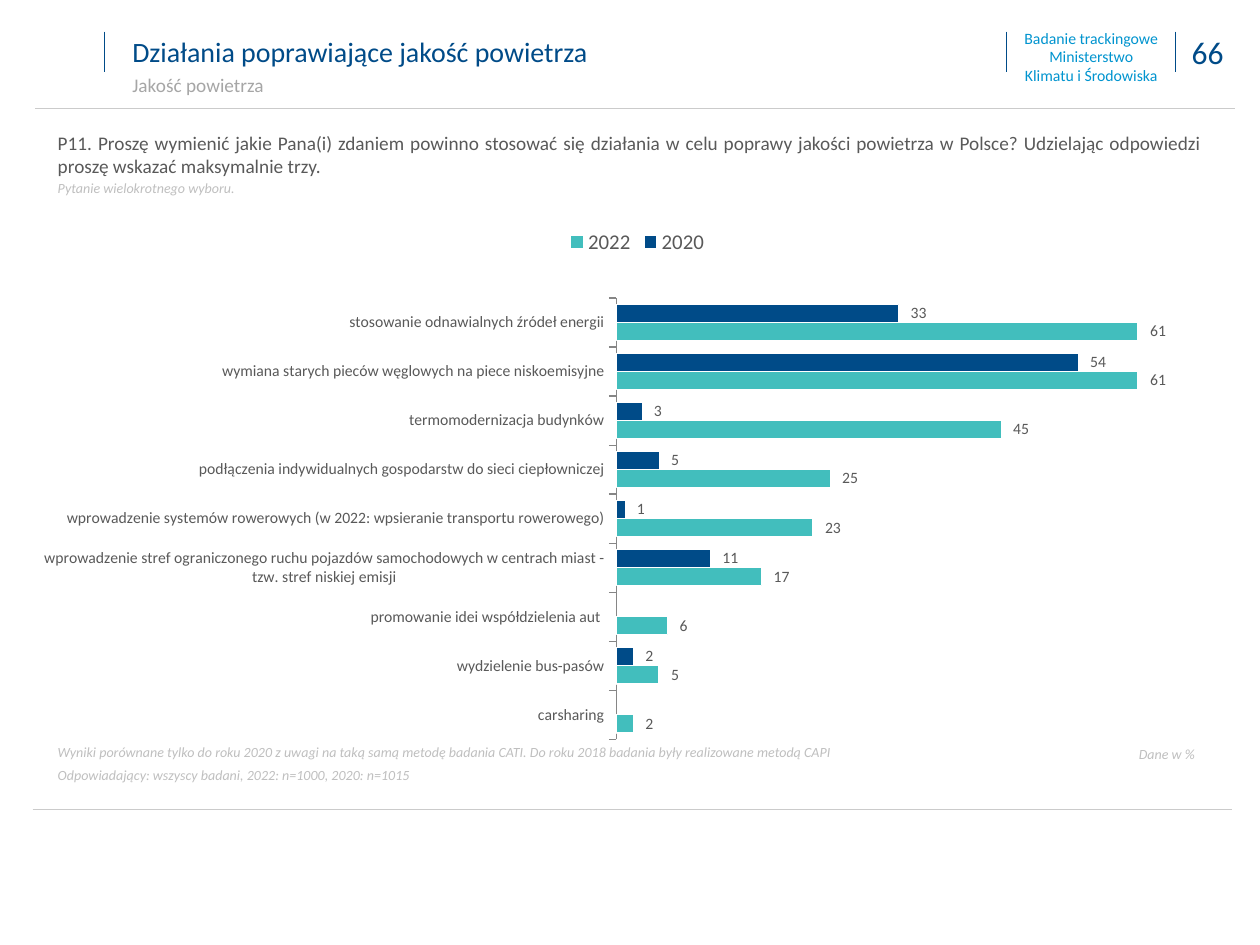
"""Builds the survey slide on actions that improve air quality."""
from dataclasses import dataclass
from typing import Optional

from lxml.etree import SubElement
from pptx import Presentation
from pptx.chart.data import CategoryChartData
from pptx.dml.color import RGBColor
from pptx.enum.chart import XL_CHART_TYPE, XL_LABEL_POSITION, XL_LEGEND_POSITION, XL_TICK_MARK
from pptx.enum.shapes import MSO_CONNECTOR
from pptx.enum.text import MSO_ANCHOR, MSO_AUTO_SIZE, PP_ALIGN
from pptx.oxml import parse_xml
from pptx.oxml.ns import nsdecls, qn
from pptx.util import Emu, Inches, Pt

FONT = "Calibri"
NAVY, SKY, TEAL = "004B88", "0094CF", "42BEBD"
DARK, MIDDLE, PALE, RULE = "595959", "A6A6A6", "BFBFBF", "CBCBCB"
WIDTH, HEIGHT = Inches(10), Inches(7.5)
COLUMNS, ROWS = 100, 75
NUMBER_FORMAT = r"_-* #\ ##0\ _z_ł_-;\-* #\ ##0\ _z_ł_-;_-"
PLOT_AREA = {"x": 0.482, "y": 0.157, "w": 0.511, "h": 0.838}


@dataclass(frozen=True)
class Area:
    """A rectangle in grid columns and rows."""
    column: float
    row: float
    columns: float
    rows: float

    def box(self) -> tuple[Emu, Emu, Emu, Emu]:
        """Return left, top, width and height."""
        return across(self.column), down(self.row), across(self.columns), down(self.rows)


@dataclass(frozen=True)
class Line:
    """One paragraph and its look."""
    text: str
    size: float
    color: str
    italic: bool = False
    before: float = 0


@dataclass(frozen=True)
class Note:
    """A text block with its place."""
    area: Area
    lines: tuple[Line, ...]
    align: PP_ALIGN = PP_ALIGN.LEFT
    anchor: MSO_ANCHOR = MSO_ANCHOR.MIDDLE
    indent: float = 1


@dataclass(frozen=True)
class Year:
    """One survey year in the chart."""
    name: str
    color: str
    outline: float
    shares: tuple[Optional[int], ...]


TITLE = Note(Area(8.3, 2, 71.7, 4.1),
             (Line("Działania poprawiające jakość powietrza", 16, NAVY),), indent=2.2)
NOTES = (
    Note(Area(8.3, 5.5, 71.5, 2.4), (Line("Jakość powietrza", 11, MIDDLE),), indent=2.2),
    Note(Area(79.4, 1.7, 14.4, 5.6),
         tuple(Line(text, 9, SKY) for text in
               ("Badanie trackingowe", "Ministerstwo", "Klimatu i Środowiska")),
         PP_ALIGN.CENTER),
    Note(Area(92.5, 2.1, 6.7, 4), (Line("66", 18, NAVY),), PP_ALIGN.CENTER),
    Note(Area(3.6, 9.9, 92.8, 6.5),
         (Line("P11. Proszę wymienić jakie Pana(i) zdaniem powinno stosować się działania w celu "
               "poprawy jakości powietrza w Polsce? Udzielając odpowiedzi proszę wskazać "
               "maksymalnie trzy.", 11, DARK),
          Line("Pytanie wielokrotnego wyboru.", 8, PALE, True, 1.6)),
         PP_ALIGN.JUSTIFY, MSO_ANCHOR.TOP),
    Note(Area(3.6, 58.5, 72.3, 2.4),
         (Line("Wyniki porównane tylko do roku 2020 z uwagi na taką samą metodę badania CATI. "
               "Do roku 2018 badania były realizowane metodą CAPI", 8, PALE, True),),
         PP_ALIGN.JUSTIFY),
    Note(Area(3.6, 60.3, 92.8, 2.4),
         (Line("Odpowiadający: wszyscy badani, 2022: n=1000, 2020: n=1015", 8, PALE, True),)),
    Note(Area(89.4, 58.6, 7, 2.4), (Line("Dane w %", 8, PALE, True),)),
)
DIVIDER_COLUMNS = (8.3, 79.9, 93.3)
RULE_STARTS = ((2.8, 8.6), (2.6, 64.2))
RULE_COLUMNS = 95.2
CHART_AREA = Area(3.5, 17.1, 93.6, 41.8)
ACTIONS = (
    "stosowanie odnawialnych źródeł energii",
    "wymiana starych pieców węglowych na piece niskoemisyjne",
    "termomodernizacja budynków",
    "podłączenia indywidualnych gospodarstw do sieci ciepłowniczej",
    "wprowadzenie systemów rowerowych (w 2022: wpsieranie transportu rowerowego)",
    "wprowadzenie stref ograniczonego ruchu pojazdów samochodowych w centrach miast - "
    "tzw. stref niskiej emisji",
    "promowanie idei współdzielenia aut ",
    "wydzielenie bus-pasów",
    "carsharing",
)
YEARS = (
    Year("2020", NAVY, 0.25, (33, 54, 3, 5, 1, 11, None, 2, None)),
    Year("2022", TEAL, 0.75, (61, 61, 45, 25, 23, 17, 6, 5, 2)),
)


def across(columns: float) -> Emu:
    """Turn grid columns into a length."""
    return Emu(round(WIDTH * columns / COLUMNS))


def down(rows: float) -> Emu:
    """Turn grid rows into a length."""
    return Emu(round(HEIGHT * rows / ROWS))


def paint(color_format, color: str) -> None:
    """Set a colour from a hex string."""
    color_format.rgb = RGBColor.from_string(color)


def style_font(font, size: float, color: str, italic: bool = False) -> None:
    """Set family, size, colour and slant."""
    font.name, font.size, font.italic = FONT, Pt(size), italic
    paint(font.color, color)


def write_note(shape, note: Note) -> None:
    """Place a text shape and fill it."""
    shape.left, shape.top, shape.width, shape.height = note.area.box()
    frame = shape.text_frame
    frame.text = "\n".join(line.text for line in note.lines)
    frame.word_wrap, frame.auto_size = True, MSO_AUTO_SIZE.NONE
    frame.vertical_anchor = note.anchor
    frame.margin_left = across(note.indent)
    for paragraph, line in zip(frame.paragraphs, note.lines):
        paragraph.alignment = note.align
        paragraph.space_before = Pt(line.before)
        for run in paragraph.runs:
            style_font(run.font, line.size, line.color, line.italic)


def draw_line(slide, column: float, row: float, columns: float, rows: float, color: str) -> None:
    """Draw a thin straight line."""
    line = slide.shapes.add_connector(MSO_CONNECTOR.STRAIGHT, across(column), down(row),
                                      across(column + columns), down(row + rows))
    line.line.width = Pt(0.25)
    paint(line.line.color, color)
    SubElement(line._element.spPr, qn("a:effectLst"))


def set_plot_area(chart) -> None:
    """Fix the inner plot area as shares of the chart."""
    plot_area = chart._chartSpace.chart.plotArea
    for layout in plot_area.findall(qn("c:layout")):
        plot_area.remove(layout)
    settings = {"layoutTarget": "inner", "xMode": "edge", "yMode": "edge", **PLOT_AREA}
    parts = "".join(f'<c:{name} val="{value}"/>' for name, value in settings.items())
    plot_area.insert(0, parse_xml(f"<c:layout {nsdecls('c')}><c:manualLayout>{parts}"
                                  "</c:manualLayout></c:layout>"))


def draw_chart(slide) -> None:
    """Draw the bars of both survey years."""
    survey = CategoryChartData()
    survey.categories = ACTIONS
    for year in YEARS:
        survey.add_series(year.name, year.shares)
    chart = slide.shapes.add_chart(XL_CHART_TYPE.BAR_CLUSTERED, *CHART_AREA.box(), survey).chart
    style_font(chart.font, 9, DARK)
    chart.has_title = False
    chart.has_legend = True
    chart.legend.position = XL_LEGEND_POSITION.TOP
    chart.legend.include_in_layout = False
    style_font(chart.legend.font, 12, DARK)
    set_plot_area(chart)
    actions, shares = chart.category_axis, chart.value_axis
    actions.reverse_order = True
    actions.major_tick_mark = XL_TICK_MARK.OUTSIDE
    style_font(actions.tick_labels.font, 9, DARK)
    paint(actions.format.line.color, "868686")
    shares.minimum_scale, shares.maximum_scale = 0, 70
    shares.has_major_gridlines = shares.visible = False
    bars = chart.plots[0]
    bars.gap_width, bars.overlap, bars.vary_by_categories = 71, 0, False
    for series, year in zip(bars.series, YEARS):
        series.invert_if_negative = False
        series.format.fill.solid()
        paint(series.format.fill.fore_color, year.color)
        series.format.line.width = Pt(year.outline)
        paint(series.format.line.color, "FFFFFF")
        labels = series.data_labels
        labels.show_value, labels.position = True, XL_LABEL_POSITION.OUTSIDE_END
        labels.number_format, labels.number_format_is_linked = NUMBER_FORMAT, False
        style_font(labels.font, 9, DARK)


def main() -> None:
    """Build and save the slide."""
    deck = Presentation()
    deck.slide_width, deck.slide_height = WIDTH, HEIGHT
    slide = deck.slides.add_slide(deck.slide_layouts[5])
    write_note(slide.shapes.title, TITLE)
    for column in DIVIDER_COLUMNS:
        draw_line(slide, column, 2.5, 0, 3.2, NAVY)
    for column, row in RULE_STARTS:
        draw_line(slide, column, row, RULE_COLUMNS, 0, RULE)
    draw_chart(slide)
    for note in NOTES:
        write_note(slide.shapes.add_textbox(*note.area.box()), note)
    deck.save("out.pptx")


if __name__ == "__main__":
    main()
